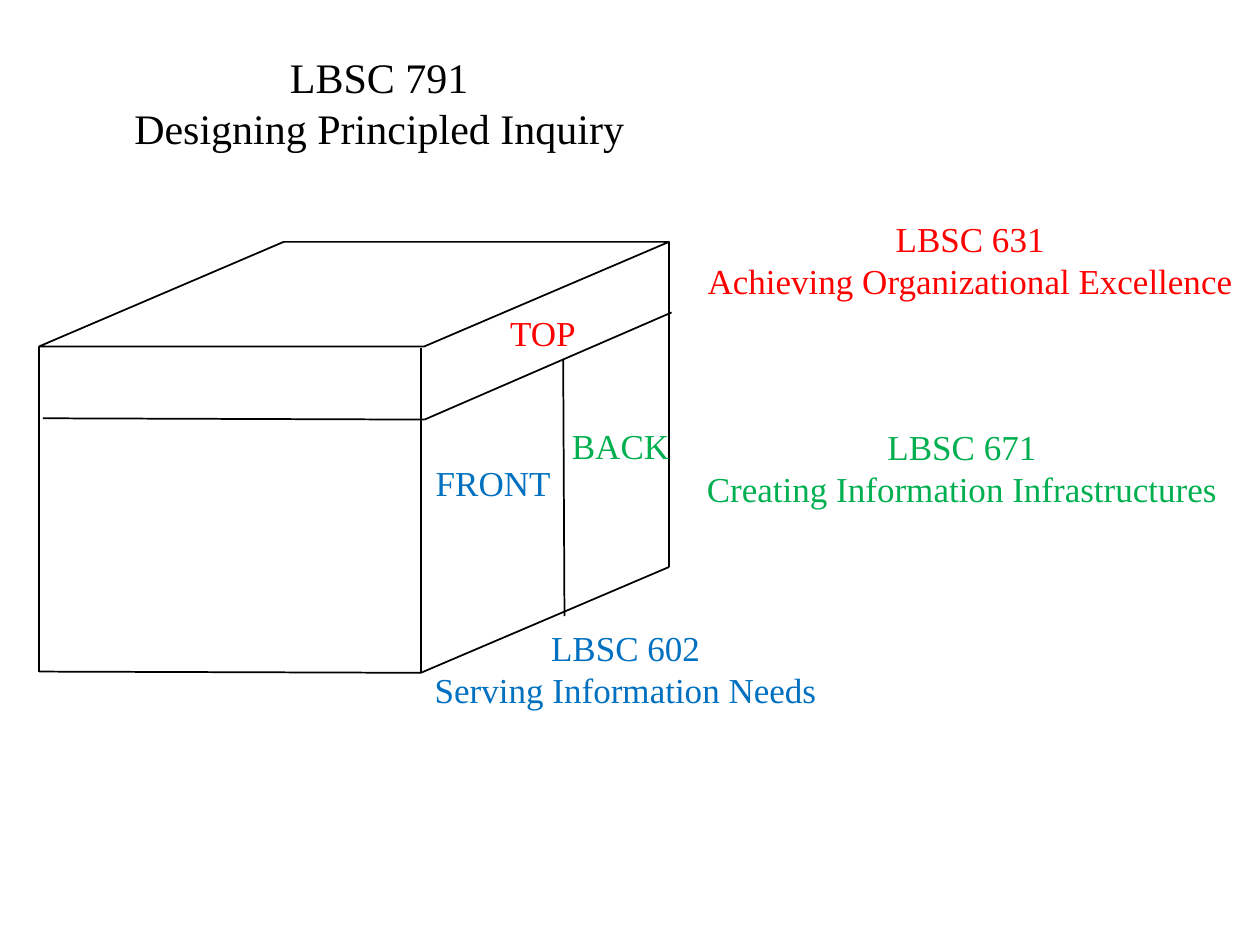
import pptx
import pptx.dml.color
import pptx.enum.shapes
import pptx.enum.text
import pptx.oxml
import pptx.oxml.ns
import pptx.util
from dataclasses import dataclass

Inches = pptx.util.Inches
Align = pptx.enum.text.PP_ALIGN


@dataclass(frozen=True)
class Theme:
    font: str = "Times New Roman"
    title_size: int = 24
    label_size: int = 20
    line_width: int = 1
    ink: str = "000000"
    paper: str = "FFFFFF"
    top: str = "FF0000"
    front: str = "0070C0"
    back: str = "00B050"


THEME = Theme()


def rgb(value):
    return pptx.dml.color.RGBColor.from_string(value)


def style_line(line):
    line.color.rgb = rgb(THEME.ink)
    line.width = pptx.util.Pt(THEME.line_width)


def write(tf, text, size, color, align, wrap=False):
    tf.text = text
    tf.word_wrap = wrap
    tf.auto_size = pptx.enum.text.MSO_AUTO_SIZE.NONE
    tf.vertical_anchor = pptx.enum.text.MSO_ANCHOR.TOP
    for p in tf.paragraphs:
        p.alignment = align
        for r in p.runs:
            r.font.name = THEME.font
            r.font.size = pptx.util.Pt(size)
            r.font.color.rgb = rgb(color)


def add_title(s, text, left, top, width, height):
    sp = s.shapes.title
    sp.left, sp.top = Inches(left), Inches(top)
    sp.width, sp.height = Inches(width), Inches(height)
    write(sp.text_frame, text, THEME.title_size, THEME.ink, Align.CENTER)


def add_label(s, text, color, left, top, width, height=0.44, align=Align.LEFT, wrap=False):
    sp = s.shapes.add_textbox(Inches(left), Inches(top), Inches(width), Inches(height))
    write(sp.text_frame, text, THEME.label_size, color, align, wrap)


def add_course(s, text, color, left, top, width):
    add_label(s, text, color, left, top, width, 0.77, Align.CENTER)


def add_lid(s, left, top, width, height, slant):
    sp = s.shapes.add_shape(
        pptx.enum.shapes.MSO_SHAPE.PARALLELOGRAM,
        Inches(left), Inches(top), Inches(width), Inches(height))
    sp.adjustments[0] = slant
    sp.shadow.inherit = False
    sp.fill.solid()
    sp.fill.fore_color.rgb = rgb(THEME.paper)
    style_line(sp.line)


def add_edge(s, start, end):
    line = s.shapes.add_connector(
        pptx.enum.shapes.MSO_CONNECTOR.STRAIGHT,
        *(Inches(v) for v in start + end))
    style_line(line.line)
    sp_pr = line._element.spPr
    sp_pr.append(pptx.oxml.parse_xml(f"<a:effectLst {pptx.oxml.ns.nsdecls('a')}/>"))


def add_box(s):
    add_lid(s, 0.31, 1.92, 5, 0.83, 2.34)
    left_foot, near_foot, far_foot = (0.31, 5.33), (3.34, 5.34), (5.31, 4.5)
    rim_corner = (3.37, 3.33)
    edges = [
        ((0.31, 2.75), left_foot),
        ((5.31, 1.92), far_foot),
        ((3.34, 2.76), near_foot),
        (left_foot, near_foot),
        (near_foot, far_foot),
        ((0.34, 3.32), rim_corner),
        (rim_corner, (5.33, 2.48)),
        ((4.47, 2.85), (4.48, 4.89)),
    ]
    for start, end in edges:
        add_edge(s, start, end)


def main():
    prs = pptx.Presentation()
    prs.slide_width, prs.slide_height = Inches(10), Inches(7.5)
    s = prs.slides.add_slide(prs.slide_layouts[5])

    add_title(s, "LBSC 791\nDesigning Principled Inquiry", 0.92, 0.36, 4.18, 0.91)
    add_box(s)

    add_label(s, "TOP", THEME.top, 3.95, 2.42, 0.73)
    add_label(s, "FRONT", THEME.front, 3.36, 3.61, 1.12)
    add_label(s, "BACK", THEME.back, 4.44, 3.32, 1.15, wrap=True)

    add_course(s, "LBSC 631\nAchieving Organizational Excellence", THEME.top, 5.5, 1.68, 4.4)
    add_course(s, "LBSC 602\nServing Information Needs", THEME.front, 3.34, 4.92, 3.25)
    add_course(s, "LBSC 671\nCreating Information Infrastructures", THEME.back, 5.5, 3.33, 4.27)

    prs.save("out.pptx")


if __name__ == "__main__":
    main()
